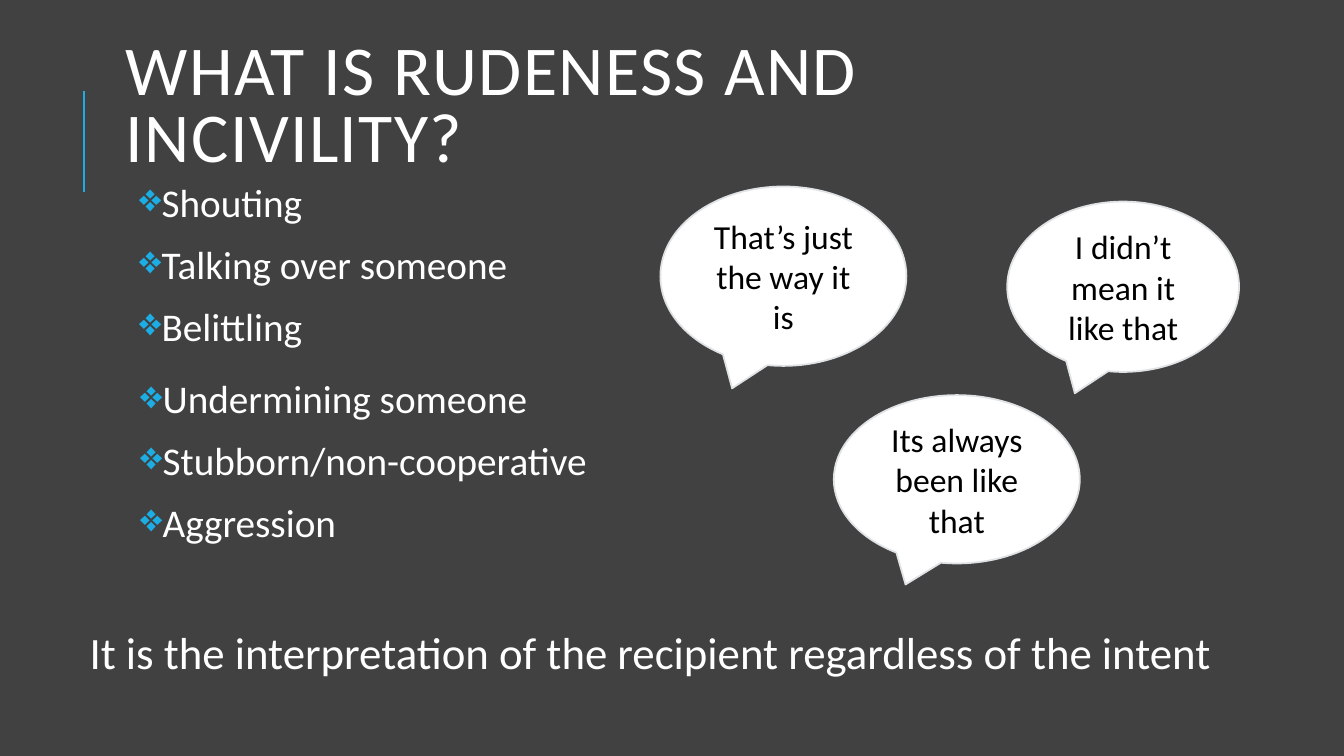
from lxml import etree
from pptx import Presentation
from pptx.dml.color import RGBColor
from pptx.enum.shapes import MSO_CONNECTOR, MSO_SHAPE
from pptx.enum.text import MSO_ANCHOR, PP_ALIGN
from pptx.oxml.ns import qn
from pptx.util import Inches, Pt

CALLOUT = MSO_SHAPE.OVAL_CALLOUT
STRAIGHT = MSO_CONNECTOR.STRAIGHT
MIDDLE = MSO_ANCHOR.MIDDLE
CENTER = PP_ALIGN.CENTER

FONT = "Calibri"
COLORS = {
    "background": "414141",
    "accent": "1CADE4",
    "white": "FFFFFF",
    "black": "000000",
    "outline": "DFE3E5",
}


def rgb(name):
    return RGBColor.from_string(COLORS[name])


def add_run(p, text, size, color):
    r = p.add_run()
    r.text = text
    r.font.name = FONT
    r.font.size = Pt(size)
    r.font.color.rgb = rgb(color)
    return r


def add_text_frame(s, box):
    tf = s.shapes.add_textbox(*map(Inches, box)).text_frame
    tf.word_wrap = True
    return tf


def add_title(s, text, box):
    tf = add_text_frame(s, box)
    tf.vertical_anchor = MIDDLE
    p = tf.paragraphs[0]
    p.line_spacing = 0.8
    r = add_run(p, text, 50, "white")
    r.font._element.set("spc", "100")


def add_accent_line(s, x, top, bottom):
    line = s.shapes.add_connector(
        STRAIGHT, Inches(x), Inches(bottom), Inches(x), Inches(top))
    line.line.color.rgb = rgb("accent")
    line.line.width = Pt(1.5)
    etree.SubElement(line._element.spPr, qn("a:effectLst"))


def set_bullet(p):
    pPr = p._p.get_or_add_pPr()
    pPr.set("marL", str(Inches(0.1)))
    pPr.set("indent", str(-Inches(0.1)))
    color = etree.SubElement(pPr, qn("a:buClr"))
    etree.SubElement(color, qn("a:srgbClr"), val=COLORS["accent"])
    etree.SubElement(pPr, qn("a:buChar"), char="❖")


def add_bullets(s, items, box):
    tf = add_text_frame(s, box)
    tf.margin_left = tf.margin_right = Inches(0.05)
    tf.margin_top = tf.margin_bottom = Inches(0.05)
    for i, item in enumerate(items):
        p = tf.add_paragraph() if i else tf.paragraphs[0]
        p.line_spacing = 0.9
        p.space_before = Pt(12)
        p.space_after = Pt(2)
        set_bullet(p)
        add_run(p, item, 28, "white")


def add_centered(tf, text, size, color):
    p = tf.paragraphs[0]
    p.alignment = CENTER
    p.space_after = Pt(6)
    add_run(p, text, size, color)


def add_speech_bubble(s, text, box):
    sp = s.shapes.add_shape(CALLOUT, *map(Inches, box))
    sp.shadow.inherit = False
    sp.fill.solid()
    sp.fill.fore_color.rgb = rgb("white")
    sp.line.color.rgb = rgb("outline")
    sp.line.width = Pt(1.25)
    tf = sp.text_frame
    tf.word_wrap = True
    tf.vertical_anchor = MIDDLE
    add_centered(tf, text, 24, "black")


def main():
    prs = Presentation()
    prs.slide_width, prs.slide_height = Inches(13.33), Inches(7.5)
    s = prs.slides.add_slide(prs.slide_layouts[6])
    s.background.fill.solid()
    s.background.fill.fore_color.rgb = rgb("background")

    add_title(s, "WHAT IS RUDENESS AND INCIVILITY?", (1.15, 0.26, 10.63, 1.64))
    add_accent_line(s, 0.83, 0.9, 1.9)

    add_bullets(s, ["Shouting", "Talking over someone", "Belittling"],
                (1.33, 1.77, 10.63, 5))
    add_bullets(s, ["Undermining someone", "Stubborn/non-cooperative", "Aggression"],
                (1.34, 3.72, 5.69, 1.93))

    for text, box in [
        ("That’s just the way it is", (6.55, 1.85, 2.44, 1.78)),
        ("Its always been like that", (8.27, 3.92, 2.44, 1.67)),
        ("I didn’t mean it like that", (9.99, 2, 2.3, 1.69)),
    ]:
        add_speech_bubble(s, text, box)

    conclusion = add_text_frame(s, (0.53, 6.15, 11.85, 0.64))
    add_centered(
        conclusion,
        "It is the interpretation of the recipient regardless of the intent",
        32, "white")

    prs.save("out.pptx")


if __name__ == "__main__":
    main()
